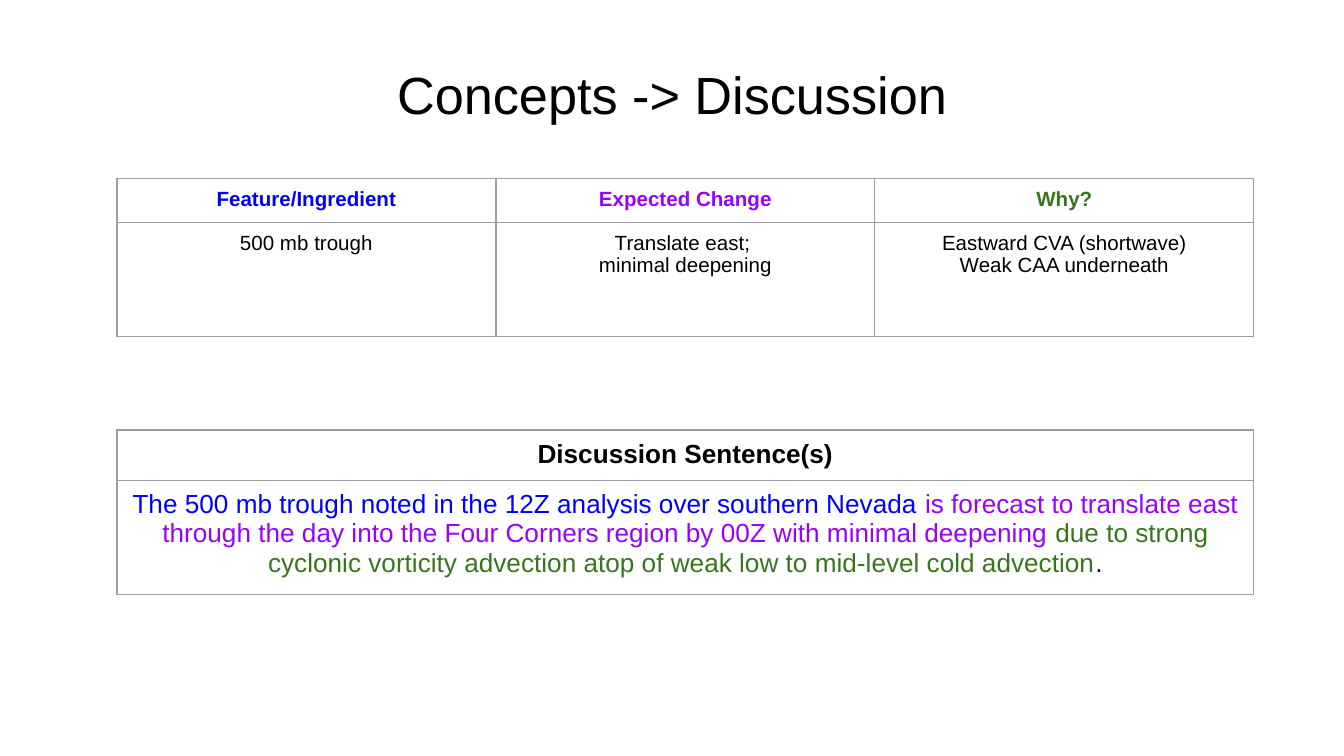
import dataclasses

import pptx
import pptx.dml.color
import pptx.enum.text
import pptx.oxml.ns
import pptx.util
from lxml import etree

Inches = pptx.util.Inches
Pt = pptx.util.Pt


@dataclasses.dataclass(frozen=True)
class Theme:
    font: str = "Arial"
    ink: str = "000000"
    feature: str = "0000FF"
    change: str = "9900FF"
    reason: str = "38761D"
    background: str = "FFFFFF"
    border: str = "9E9E9E"
    border_width: float = 0.75
    title_size: int = 28
    concept_size: int = 11
    sentence_size: int = 14


THEME = Theme()
ROW_HEIGHTS = (0.32, 0.85)
COLUMN_COUNT = 3


def write_text(frame, paragraphs, size, bold=False):
    """Fill a frame with centred paragraphs, each a list of (text, colour)."""
    frame.word_wrap = True
    for index, spans in enumerate(paragraphs):
        para = frame.paragraphs[0] if index == 0 else frame.add_paragraph()
        para.alignment = pptx.enum.text.PP_ALIGN.CENTER
        for text, colour in spans:
            span = para.add_run()
            span.text = text
            span.font.name = THEME.font
            span.font.size = Pt(size)
            span.font.bold = bold
            span.font.color.rgb = pptx.dml.color.RGBColor.from_string(colour)


def style_cell(cell):
    """Give a cell its margins, four thin borders and no fill."""
    cell.margin_left = cell.margin_right = Inches(0.1)
    cell.margin_top = cell.margin_bottom = Inches(0.07)
    cell.fill.background()
    qn = pptx.oxml.ns.qn
    properties = cell._tc.get_or_add_tcPr()
    for position, side in enumerate(("a:lnL", "a:lnR", "a:lnT", "a:lnB")):
        line = etree.Element(qn(side), w=str(Pt(THEME.border_width)))
        fill = etree.SubElement(line, qn("a:solidFill"))
        etree.SubElement(fill, qn("a:srgbClr"), val=THEME.border)
        properties.insert(position, line)


def add_title(slide, text, left, top, width, height):
    box = slide.shapes.add_textbox(
        Inches(left), Inches(top), Inches(width), Inches(height))
    box.text_frame.vertical_anchor = pptx.enum.text.MSO_ANCHOR.MIDDLE
    write_text(box.text_frame, [[(text, THEME.ink)]], THEME.title_size)


def add_grid(slide, rows, size, left, top, width):
    """Add a table with a bold header; a row of one cell spans all columns."""
    table = slide.shapes.add_table(
        len(rows), COLUMN_COUNT, Inches(left), Inches(top),
        Inches(width), Inches(sum(ROW_HEIGHTS))).table
    table.first_row = table.horz_banding = False
    for column in table.columns:
        column.width = Inches(width / COLUMN_COUNT)
    for row_index, row in enumerate(rows):
        table.rows[row_index].height = Inches(ROW_HEIGHTS[row_index])
        for column_index in range(COLUMN_COUNT):
            style_cell(table.cell(row_index, column_index))
        if len(row) == 1:
            table.cell(row_index, 0).merge(
                table.cell(row_index, COLUMN_COUNT - 1))
        for column_index, paragraphs in enumerate(row):
            write_text(table.cell(row_index, column_index).text_frame,
                       paragraphs, size, bold=row_index == 0)


def main():
    deck = pptx.Presentation()
    # Widescreen, 16:9
    deck.slide_width = Inches(10)
    deck.slide_height = deck.slide_width * 9 // 16
    slide = deck.slides.add_slide(deck.slide_layouts[6])
    backdrop = slide.background.fill
    backdrop.solid()
    backdrop.fore_color.rgb = pptx.dml.color.RGBColor.from_string(
        THEME.background)

    # Title
    add_title(slide, "Concepts -> Discussion", 0.5, 0.23, 9, 0.94)

    # Concepts behind the forecast
    concepts = [
        [[[("Feature/Ingredient", THEME.feature)]],
         [[("Expected Change", THEME.change)]],
         [[("Why?", THEME.reason)]]],
        [[[("500 mb trough", THEME.ink)]],
         [[("Translate east; ", THEME.ink)],
          [("minimal deepening", THEME.ink)]],
         [[("Eastward CVA (shortwave)", THEME.ink)],
          [("Weak CAA underneath", THEME.ink)]]],
    ]
    add_grid(slide, concepts, THEME.concept_size, 0.87, 1.33, 8.46)

    # Discussion sentence, coloured by the concept each part covers
    sentence = [
        ("The 500 mb trough noted in the 12Z analysis over southern Nevada ",
         THEME.feature),
        ("is forecast to translate east through the day into the Four Corners "
         "region by 00Z with minimal deepening ", THEME.change),
        ("due to strong cyclonic vorticity advection atop of weak low to "
         "mid-level cold advection", THEME.reason),
        (".", THEME.ink),
    ]
    discussion = [[[[("Discussion Sentence(s)", THEME.ink)]]], [[sentence]]]
    add_grid(slide, discussion, THEME.sentence_size, 0.87, 3.2, 8.46)

    deck.save("out.pptx")


if __name__ == "__main__":
    main()
